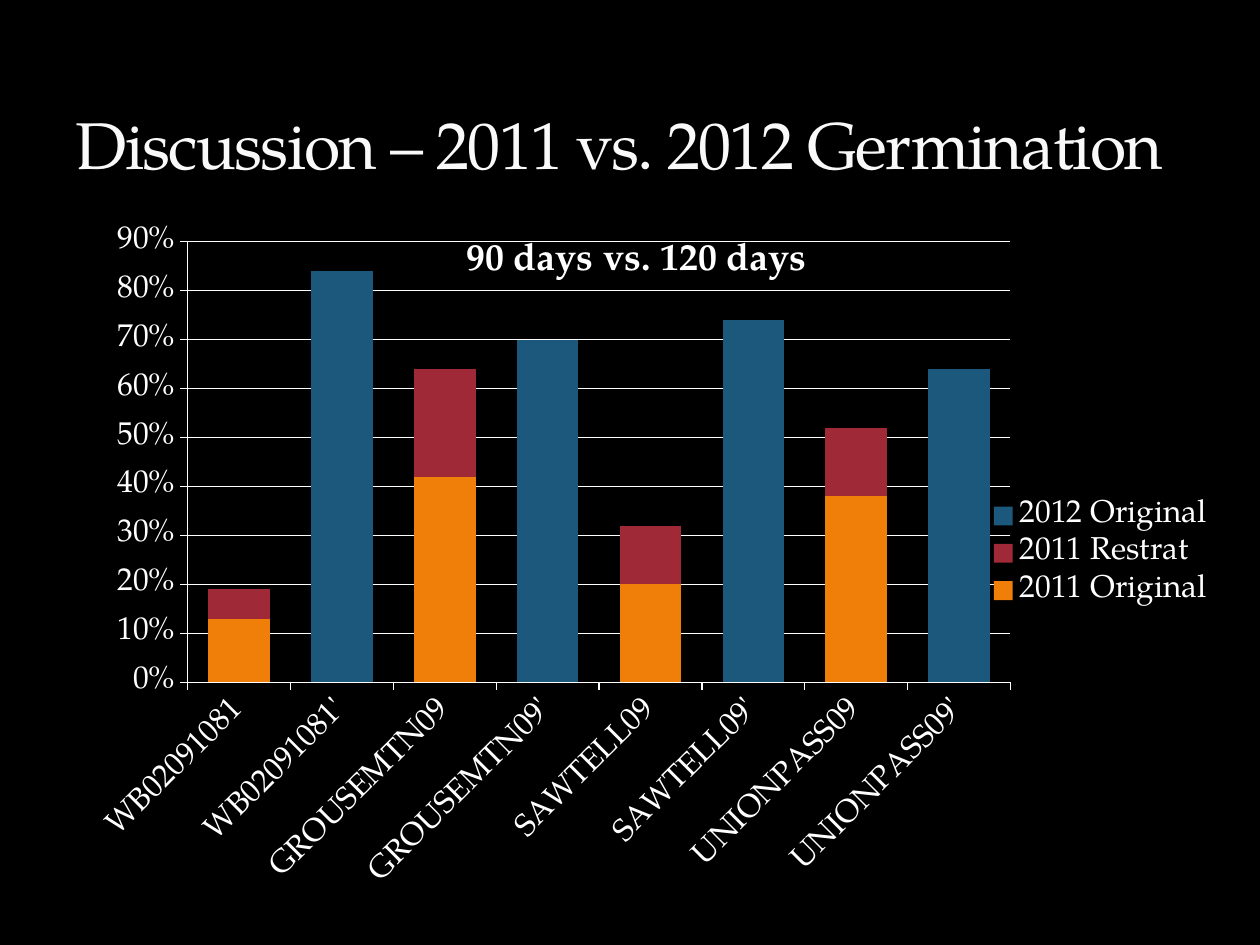
from dataclasses import dataclass

from lxml import etree
from pptx import Presentation
from pptx.chart.data import CategoryChartData
from pptx.dml.color import RGBColor
from pptx.enum.chart import XL_CHART_TYPE, XL_LEGEND_POSITION, XL_TICK_MARK
from pptx.enum.text import MSO_ANCHOR, PP_ALIGN
from pptx.oxml import parse_xml
from pptx.oxml.ns import nsdecls, qn
from pptx.util import Pt

STACKED = XL_CHART_TYPE.COLUMN_STACKED
RIGHT = XL_LEGEND_POSITION.RIGHT
OUTSIDE = XL_TICK_MARK.OUTSIDE
BOTTOM = MSO_ANCHOR.BOTTOM
LEFT = PP_ALIGN.LEFT
CENTER = PP_ALIGN.CENTER

FONT = "TeX Gyre Pagella"
COLORS = {
    "background": "000000",
    "title": "F9F9F9",
    "outline": "2C2C2C",
    "chart": "FFFFFF",
    "orange": "F07F09",
    "red": "9F2936",
    "blue": "1B587C",
}
SITES = ["WB02091081", "GROUSEMTN09", "SAWTELL09", "UNIONPASS09"]


@dataclass
class Germination:
    name: str
    rates: list[float]
    is_2012: bool
    color: str

    def values(self) -> list[float | None]:
        pairs = [(None, rate) if self.is_2012 else (rate, None) for rate in self.rates]
        return [value for pair in pairs for value in pair]


SERIES = [
    Germination("2011 Original", [0.13, 0.42, 0.2, 0.38], False, "orange"),
    Germination("2011 Restrat", [0.06, 0.22, 0.12, 0.14], False, "red"),
    Germination("2012 Original", [0.84, 0.7, 0.74, 0.64], True, "blue"),
]


def rgb(name: str) -> RGBColor:
    return RGBColor.from_string(COLORS[name])


def format_font(font, *, size: float, color: str, bold: bool = False) -> None:
    font.name = FONT
    font.size = Pt(size)
    font.bold = bold
    font.color.rgb = rgb(color)


def write_text(frame, text: str, *, align, **font_format):
    para = frame.paragraphs[0]
    para.alignment = align
    span = para.add_run()
    span.text = text
    format_font(span.font, **font_format)
    return span


def outline_text(span, color: str) -> None:
    properties = span.font._element
    properties.set("spc", "-100")
    properties.insert(0, parse_xml(
        f'<a:ln {nsdecls("a")} w="3175"><a:solidFill><a:srgbClr val="{COLORS[color]}">'
        '<a:alpha val="25000"/></a:srgbClr></a:solidFill></a:ln>'
    ))


def set_layout(parent, index: int, inner: bool = False, **fractions: float) -> None:
    for old in parent.findall(qn("c:layout")):
        parent.remove(old)
    layout = parse_xml(f'<c:layout {nsdecls("c")}><c:manualLayout/></c:layout>')
    settings = {"layoutTarget": "inner"} if inner else {}
    settings |= {f"{side}Mode": "edge" for side in ("x", "y")}
    settings |= fractions
    for tag, value in settings.items():
        etree.SubElement(layout[0], qn(f"c:{tag}")).set("val", str(value))
    parent.insert(index, layout)


def style_line(line, width: float) -> None:
    line.color.rgb = rgb("chart")
    line.width = Pt(width)


def add_title(page) -> None:
    box = page.shapes.title
    box.left, box.top, box.width, box.height = Pt(36), Pt(12.24), Pt(648), Pt(95.76)
    box.text_frame.vertical_anchor = BOTTOM
    span = write_text(box.text_frame, "Discussion – 2011 vs. 2012 Germination",
                      align=LEFT, size=37.8, color="title")
    outline_text(span, "outline")


def style_axes(chart) -> None:
    for axis in (chart.category_axis, chart.value_axis):
        axis.major_tick_mark = OUTSIDE
        style_line(axis.format.line, 0.75)
        format_font(axis.tick_labels.font, size=18, color="chart")
    labels = chart.category_axis.tick_labels.font._element
    labels.getparent().getparent().getparent().find(qn("a:bodyPr")).set("rot", "-2700000")
    rates = chart.value_axis
    rates.minimum_scale, rates.maximum_scale, rates.major_unit = 0, 0.9, 0.1
    rates.tick_labels.number_format = "0%"
    rates.tick_labels.number_format_is_linked = False
    rates.has_major_gridlines = True
    style_line(rates.major_gridlines.format.line, 0.75)


def add_chart_title(chart) -> None:
    chart.has_title = True
    write_text(chart.chart_title.text_frame, "90 days vs. 120 days",
               align=CENTER, size=21.6, color="chart", bold=True)
    title = chart.chart_title._element
    set_layout(title, 1, x=0.34, y=0.03)
    title.find(qn("c:overlay")).set("val", "1")


def add_legend(chart) -> None:
    chart.has_legend = True
    legend = chart.legend
    legend.position = RIGHT
    legend.include_in_layout = False
    format_font(legend.font, size=18, color="chart")
    set_layout(legend._element, 1, x=0.79, y=0.41, w=0.2, h=0.17)


def add_germination_chart(page) -> None:
    data = CategoryChartData(number_format="0%")
    data.categories = [site + mark for site in SITES for mark in ("", "'")]
    for item in SERIES:
        data.add_series(item.name, item.values())
    chart = page.shapes.add_chart(STACKED, Pt(36), Pt(120.24), Pt(666), Pt(396), data).chart
    format_font(chart.font, size=18, color="chart")
    plot = chart.plots[0]
    plot.vary_by_categories = False
    plot.gap_width, plot.overlap = 67, 100
    for series, item in zip(plot.series, SERIES):
        series.format.fill.solid()
        series.format.fill.fore_color.rgb = rgb(item.color)
    style_axes(chart)
    add_chart_title(chart)
    add_legend(chart)
    plot_area = chart._chartSpace.chart.plotArea
    set_layout(plot_area, 0, inner=True, x=0.107, y=0.045, w=0.706, h=0.636)


def main() -> None:
    deck = Presentation()
    deck.slide_width, deck.slide_height = Pt(720), Pt(540)
    page = deck.slides.add_slide(deck.slide_layouts[5])
    page.background.fill.solid()
    page.background.fill.fore_color.rgb = rgb("background")
    add_title(page)
    add_germination_chart(page)
    deck.save("out.pptx")


if __name__ == "__main__":
    main()
